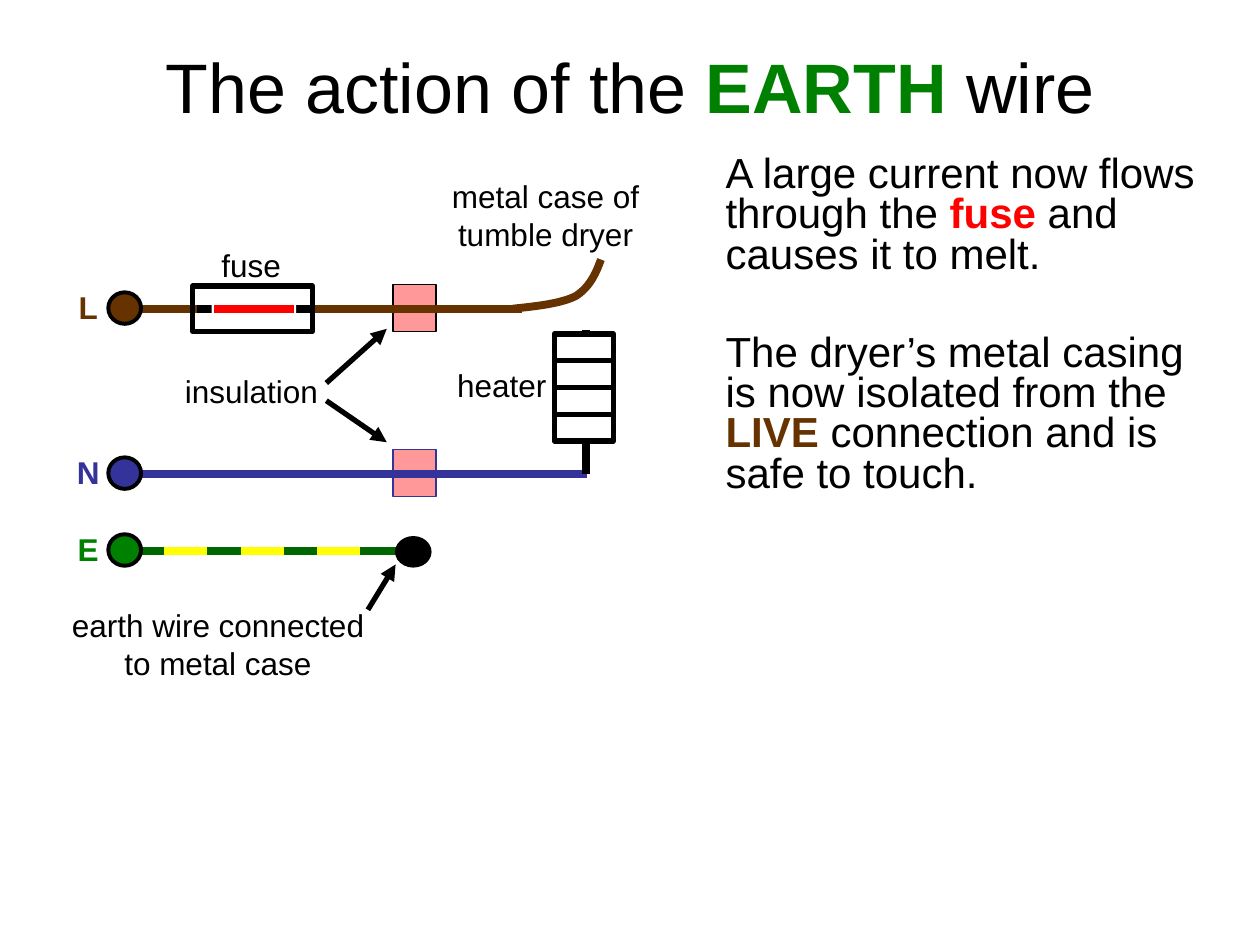
"""Build the slide on the action of the earth wire."""
from dataclasses import dataclass

from lxml import etree
from pptx import Presentation
from pptx.dml.color import RGBColor
from pptx.enum import shapes, text
from pptx.oxml.ns import qn
from pptx.util import Inches, Pt


@dataclass(frozen=True)
class Theme:
    """Colours, type sizes and line widths of the slide."""
    font: str = "Arial"
    title: int = 40
    body: int = 24
    label: int = 18
    black: str = "000000"
    white: str = "FFFFFF"
    live: str = "663300"
    neutral: str = "333399"
    earth: str = "008000"
    earth_wire: str = "006600"
    stripe: str = "FFFF00"
    melt: str = "FF0000"
    insulation: str = "FF9999"
    wire: float = 4.5
    outline: float = 3
    rim: float = 2.25
    hairline: float = 0.75


THEME = Theme()
RECT = shapes.MSO_SHAPE.RECTANGLE
OVAL = shapes.MSO_SHAPE.OVAL
LEFT, CENTER = text.PP_ALIGN.LEFT, text.PP_ALIGN.CENTER
LIVE_Y, NEUTRAL_Y, EARTH_Y = 2.45, 3.76, 4.37


def add_text(page, place, paras, size, align=LEFT, anchor=text.MSO_ANCHOR.TOP,
             spacing=None, gap=0):
    """Add a text box; each span is its wording, with a colour if it is bold."""
    box = page.shapes.add_textbox(*map(Inches, place))
    frame = box.text_frame
    frame.word_wrap = True
    frame.vertical_anchor = anchor
    for index, spans in enumerate(paras):
        para = frame.add_paragraph() if index else frame.paragraphs[0]
        para.alignment = align
        para.line_spacing = spacing
        para.space_before = Pt(gap if index else 0)
        for wording, *accent in spans:
            span = para.add_run()
            span.text = wording
            span.font.name = THEME.font
            span.font.size = Pt(size)
            span.font.bold = bool(accent)
            span.font.color.rgb = RGBColor.from_string(accent[0] if accent else THEME.black)


def paint(shape, fill=None, line=None, width=0):
    """Set the fill and outline of a shape and take off its shadow."""
    shape.shadow.inherit = False
    if fill:
        shape.fill.solid()
        shape.fill.fore_color.rgb = RGBColor.from_string(fill)
    else:
        shape.fill.background()
    if line:
        shape.line.color.rgb = RGBColor.from_string(line)
        shape.line.width = Pt(width)
    else:
        shape.line.fill.background()


def add_shape(page, kind, place, fill=None, line=None, width=0):
    """Add a painted preset shape."""
    paint(page.shapes.add_shape(kind, *map(Inches, place)), fill, line, width)


def add_line(page, start, end, color, width=THEME.wire, arrow=False):
    """Add a straight line, with an arrowhead at its end on request."""
    line = page.shapes.add_connector(shapes.MSO_CONNECTOR.STRAIGHT, *map(Inches, start + end))
    line.line.color.rgb = RGBColor.from_string(color)
    line.line.width = Pt(width)
    if arrow:
        etree.SubElement(line.line._get_or_add_ln(), qn("a:tailEnd"), type="triangle")
    etree.SubElement(line._element.spPr, qn("a:effectLst"))


def bezier(points, steps=12):
    """Return the points after the start along a cubic curve."""
    curve = []
    for step in range(1, steps + 1):
        t = step / steps
        weights = ((1 - t) ** 3, 3 * t * (1 - t) ** 2, 3 * t * t * (1 - t), t ** 3)
        curve.append(tuple(Inches(sum(w * p[axis] for w, p in zip(weights, points)))
                           for axis in (0, 1)))
    return curve


def add_loose_wire(page):
    """Draw the live wire that has come off the heater and bent upwards."""
    start, middle, end = (4.07, LIVE_Y), (4.57, 2.35), (4.77, 2.06)
    outline = page.shapes.build_freeform(*map(Inches, start))
    outline.add_line_segments(bezier((start, (4.26, 2.43), (4.45, 2.41), middle))
                              + bezier((middle, (4.68, 2.28), (4.73, 2.17), end)), close=False)
    paint(outline.convert_to_shape(), line=THEME.live, width=THEME.wire)


def add_terminal(page, letter, y, color):
    """Draw a terminal with its letter."""
    add_shape(page, OVAL, (0.86, y - 0.13, 0.26, 0.25), color, THEME.black, THEME.rim)
    add_text(page, (0.51, y - 0.21, 0.38, 0.4), [[(letter, color)]], THEME.label, CENTER)


def add_heater(page):
    """Draw the heater and its lead to neutral."""
    left, top, width, height = 4.4, 2.65, 0.47, 0.85
    add_line(page, (4.65, 2.62), (4.65, NEUTRAL_Y), THEME.black)
    add_shape(page, RECT, (left, top, width, height), THEME.white, THEME.black, THEME.outline)
    for part in range(1, 4):
        y = top + part * height / 4
        add_line(page, (left, y), (left + width, y), THEME.black, THEME.outline)


def add_fuse(page):
    """Draw the fuse with its red wire between two black leads."""
    add_shape(page, RECT, (1.53, 2.27, 0.95, 0.36), None, THEME.black, THEME.outline)
    add_line(page, (1.56, LIVE_Y), (2.48, LIVE_Y), THEME.black)
    add_shape(page, RECT, (1.68, 2.32, 0.67, 0.26), THEME.white)
    add_line(page, (1.7, LIVE_Y), (2.33, LIVE_Y), THEME.melt)


def add_circuit(page):
    """Draw the wires, parts and terminals."""
    for y, edge in ((LIVE_Y, THEME.black), (NEUTRAL_Y, THEME.neutral)):
        add_shape(page, RECT, (3.12, y - 0.19, 0.34, 0.37), THEME.insulation, edge, THEME.hairline)
    for y, end, color in ((LIVE_Y, 4.14, THEME.live), (NEUTRAL_Y, 4.66, THEME.neutral),
                          (EARTH_Y, 3.27, THEME.earth_wire)):
        add_line(page, (1.02, y), (end, y), color)
    for stripe in range(3):
        x = 1.3 + 0.61 * stripe
        add_line(page, (x, EARTH_Y), (x + 0.34, EARTH_Y), THEME.stripe)
    add_shape(page, OVAL, (3.14, 4.26, 0.28, 0.24), THEME.black, THEME.black, THEME.hairline)
    add_heater(page)
    add_fuse(page)
    add_loose_wire(page)
    for letter, y, color in (("L", LIVE_Y, THEME.live), ("N", NEUTRAL_Y, THEME.neutral),
                             ("E", EARTH_Y, THEME.earth)):
        add_terminal(page, letter, y, color)


def add_labels(page):
    """Name the parts and point to them."""
    for wording, place, align in (
            ("fuse", (1.66, 1.9, 0.76, 0.4), LEFT),
            ("insulation", (1.37, 2.9, 1.47, 0.4), LEFT),
            ("heater", (3.53, 2.86, 1.01, 0.4), LEFT),
            ("metal case of tumble dryer", (3.23, 1.36, 2.2, 0.7), CENTER),
            ("earth wire connected to metal case", (0.37, 4.76, 2.72, 0.7), CENTER)):
        add_text(page, place, [[(wording,)]], THEME.label, align)
    for start, end in (((2.59, 3.04), (3.07, 2.61)), ((2.59, 3.18), (3.07, 3.51)),
                       ((2.92, 4.84), (3.14, 4.48))):
        add_line(page, start, end, THEME.black, THEME.outline, arrow=True)


def main():
    """Build and save the deck."""
    deck = Presentation()
    deck.slide_width, deck.slide_height = Inches(10), Inches(7.5)
    page = deck.slides.add_slide(deck.slide_layouts[6])
    add_text(page, (0.5, 0.3, 9, 0.75),
             [[("The action of the ",), ("EARTH", THEME.earth), (" wire",)]],
             THEME.title, CENTER, text.MSO_ANCHOR.MIDDLE)
    add_text(page, (5.66, 1.19, 4.12, 2.14), [
        [("A large current now flows through the ",), ("fuse ", THEME.melt),
         ("and causes it to melt.",)],
        [("The dryer’s metal casing is now isolated from the ",), ("LIVE", THEME.live),
         (" connection and is safe to touch.",)],
    ], THEME.body, spacing=0.8, gap=33)
    add_circuit(page)
    add_labels(page)
    deck.save("out.pptx")


if __name__ == "__main__":
    main()
